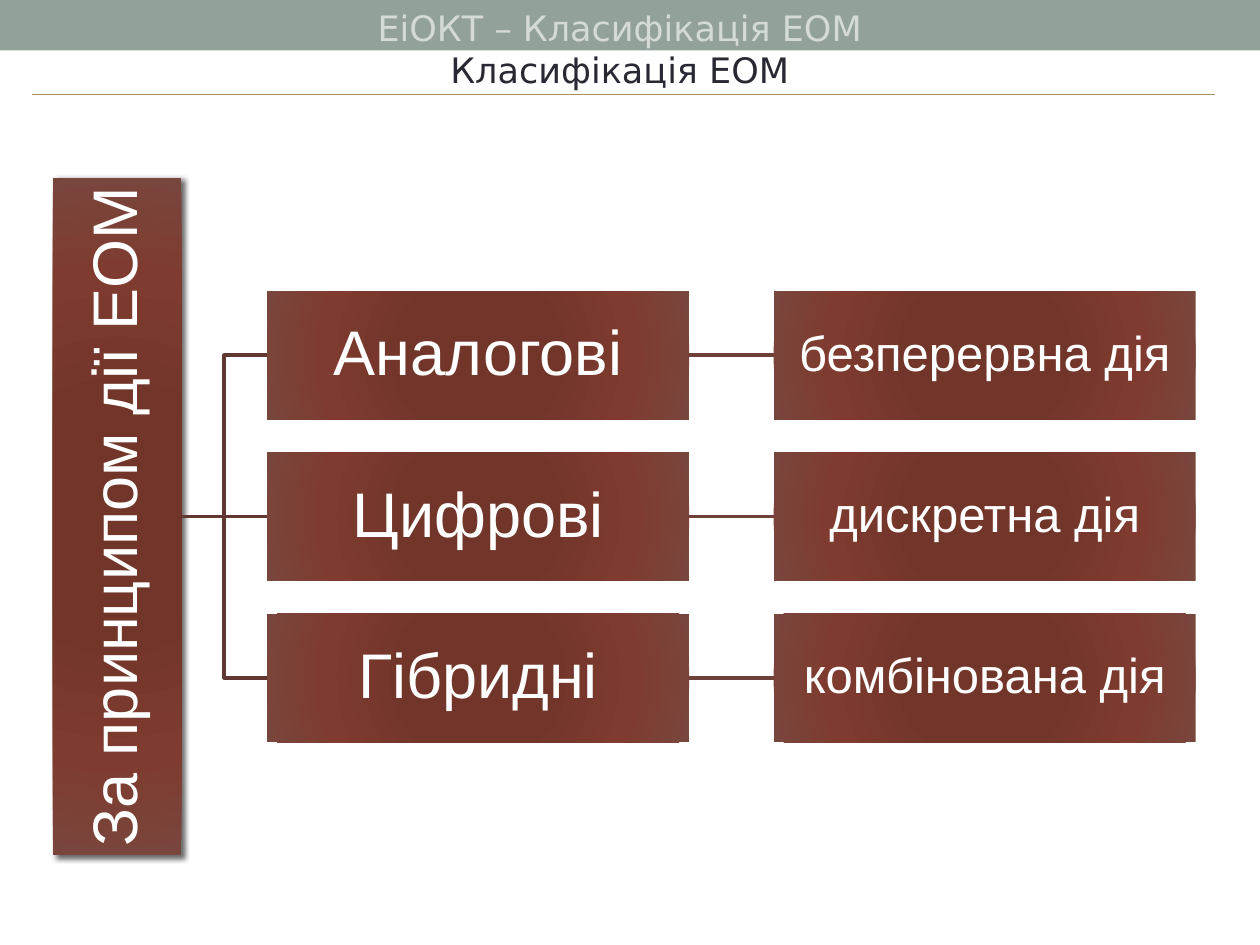
from lxml.etree import SubElement
from pptx import Presentation
from pptx.dml.color import RGBColor
from pptx.enum.shapes import MSO_CONNECTOR, MSO_SHAPE
from pptx.enum.text import MSO_ANCHOR, MSO_AUTO_SIZE, PP_ALIGN
from pptx.oxml.ns import qn
from pptx.util import Inches, Pt

COLORS = {
    "band": "93A299", "band_text": "D4DAD6", "title": "292934", "rule": "AD8F67",
    "branch": "613831", "link": "6E4037", "white": "FFFFFF", "shadow": "000000",
}
BOX_GRADIENT = {0: "743327", 34: "72352A", 70: "7F3B2F", 100: "79463D"}
CLASSES = [
    ("Аналогові", "безперервна дія"),
    ("Цифрові", "дискретна дія"),
    ("Гібридні", "комбінована дія"),
]
BOX_WIDTH, BOX_HEIGHT = 3.35, 1.02
CLASS_LEFT, ACTION_LEFT = 2.12, 6.14
FIRST_TOP, ROW_PITCH = 2.31, 1.28
TOP, LEFT, BOTTOM, RIGHT = range(4)


def color(name):
    return RGBColor.from_string(COLORS[name])


def add_xml(parent, tag, **attributes):
    return SubElement(parent, qn(tag), {key: str(value) for key, value in attributes.items()})


def set_frame(frame, margin, **formats):
    for side in ("left", "top", "right", "bottom"):
        setattr(frame, f"margin_{side}", Inches(margin))
    for name, value in formats.items():
        setattr(frame, name, value)


def write(para, text, size, font, color_name, line_spacing=1.0):
    para.alignment = PP_ALIGN.CENTER
    para.line_spacing = line_spacing
    span = para.add_run()
    span.text = text
    for name, value in {"size": Pt(size), "name": font}.items():
        setattr(span.font, name, value)
    span.font.color.rgb = color(color_name)


def add_rectangle(page, left, top, width, height):
    box = page.shapes.add_shape(
        MSO_SHAPE.RECTANGLE, Inches(left), Inches(top), Inches(width), Inches(height))
    box.shadow.inherit = False
    box.line.fill.background()
    return box


def fill_radially(box):
    properties = box._element.spPr
    gradient = add_xml(properties, "a:gradFill", rotWithShape=1)
    stops = add_xml(gradient, "a:gsLst")
    for position, value in BOX_GRADIENT.items():
        stop = add_xml(stops, "a:gs", pos=position * 1000)
        add_xml(stop, "a:srgbClr", val=value)
    circle = add_xml(gradient, "a:path", path="circle")
    add_xml(circle, "a:fillToRect", l=100000, t=100000, r=100000, b=100000)
    properties.find(qn("a:prstGeom")).addnext(gradient)


def add_drop_shadow(box):
    effects = box._element.spPr.find(qn("a:effectLst"))
    shadow = add_xml(effects, "a:outerShdw", blurRad=Pt(3), dist=Pt(2),
                     dir=45 * 60000, algn="tl", rotWithShape=0)
    tone = add_xml(shadow, "a:srgbClr", val=COLORS["shadow"])
    add_xml(tone, "a:alpha", val=60000)


def add_label_box(page, text, left, top, size, margin, width=BOX_WIDTH, height=BOX_HEIGHT):
    box = add_rectangle(page, left, top, width, height)
    fill_radially(box)
    frame = box.text_frame
    set_frame(frame, margin, word_wrap=True, vertical_anchor=MSO_ANCHOR.MIDDLE)
    write(frame.paragraphs[0], text, size, "Arial", "white", line_spacing=0.9)
    return box


def add_root_bar(page):
    """Add the tall box whose label reads from bottom to top."""
    bar = add_label_box(page, "За принципом дії ЕОМ", 0.42, 1.41, 36, 0.03, BOX_HEIGHT, 5.38)
    bar.text_frame._txBody.bodyPr.set("vert", "vert270")
    add_drop_shadow(bar)
    return bar


def add_line(page, kind, color_name, width, start=(0, 0), end=(0, 0)):
    points = [Inches(value) for value in (*start, *end)]
    line = page.shapes.add_connector(kind, *points)
    line.line.color.rgb = color(color_name)
    line.line.width = Pt(width)
    add_xml(line._element.spPr, "a:effectLst")
    return line


def join(page, source, target, color_name, kind=MSO_CONNECTOR.STRAIGHT):
    line = add_line(page, kind, color_name, 2.08)
    line.begin_connect(source, RIGHT)
    line.end_connect(target, LEFT)


def add_header(page):
    band = add_rectangle(page, 0, 0, 10, 0.4)
    band.fill.solid()
    band.fill.fore_color.rgb = color("band")
    box = page.shapes.add_textbox(Inches(0.17), 0, Inches(9.5), Inches(0.77))
    frame = box.text_frame
    frame.word_wrap = True
    frame.auto_size = MSO_AUTO_SIZE.SHAPE_TO_FIT_TEXT
    write(frame.paragraphs[0], "ЕіОКТ – Класифікація ЕОМ", 20, "DejaVu Sans", "band_text")
    write(frame.add_paragraph(), "Класифікація ЕОМ", 20, "DejaVu Sans", "title")
    add_line(page, MSO_CONNECTOR.STRAIGHT, "rule", 0.75, (0.25, 0.75), (9.64, 0.75))


def add_classification(page):
    bar = add_root_bar(page)
    middle = len(CLASSES) // 2
    for row, (class_name, action) in enumerate(CLASSES):
        top = FIRST_TOP + row * ROW_PITCH
        class_box = add_label_box(page, class_name, CLASS_LEFT, top, 36, 0.03)
        action_box = add_label_box(page, action, ACTION_LEFT, top, 28, 0.02)
        kind = MSO_CONNECTOR.STRAIGHT if row == middle else MSO_CONNECTOR.ELBOW
        join(page, bar, class_box, "branch", kind)
        join(page, class_box, action_box, "link")


def main():
    deck = Presentation()
    deck.slide_width, deck.slide_height = Inches(10), Inches(7.5)
    page = deck.slides.add_slide(deck.slide_layouts[6])
    add_header(page)
    add_classification(page)
    deck.save("out.pptx")


if __name__ == "__main__":
    main()
